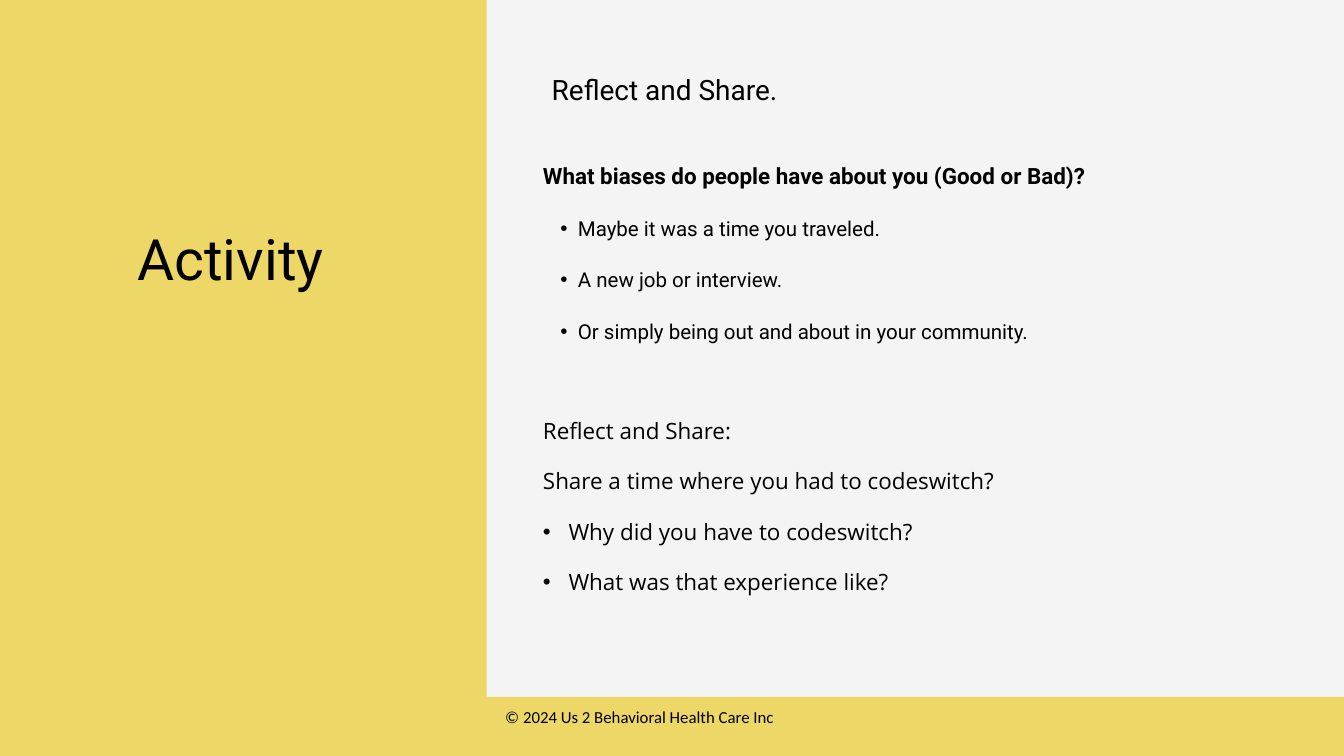
from lxml import etree
from pptx import Presentation
from pptx.dml.color import RGBColor
from pptx.enum.shapes import MSO_SHAPE
from pptx.enum.text import MSO_ANCHOR, MSO_AUTO_SIZE, PP_ALIGN
from pptx.oxml.ns import qn
from pptx.util import Inches, Pt

YELLOW = RGBColor(0xED, 0xD7, 0x67)
LIGHT_GREY = RGBColor(0xF4, 0xF4, 0xF4)
BLACK = RGBColor(0, 0, 0)

WIDTH, HEIGHT = 20, 11.25
PANEL_LEFT = 7.24
FOOTER_TOP = 10.37
COLUMN_WIDTH = 10.35

# Paragraph styles; spacing in points, indent in inches
TITLE = {"font": "Roboto", "size": 61, "line": 73.2, "align": PP_ALIGN.CENTER}
HEADING = {"font": "Roboto", "size": 30, "line": 42}
QUESTION = {"font": "Roboto", "size": 24, "line": 73.2, "bold": True}
EXAMPLE = {"font": "Roboto", "size": 22, "line": 55, "level": 1, "margin": 0.52, "hang": 0.26}
PROMPT = {"font": "Open Sans", "size": 24, "line": 54}
FIRST_PROMPT = {**PROMPT, "before": 54}
FOLLOW_UP = {**PROMPT, "margin": 0.38, "hang": 0.38}
COPYRIGHT = {"font": "Calibri", "size": 18}

TITLE_TEXT = [("Activity", TITLE)]
HEADING_TEXT = [("Reflect and Share.", HEADING)]
BODY_TEXT = [
    ("What biases do people have about you (Good or Bad)?", QUESTION),
    ("Maybe it was a time you traveled.", EXAMPLE),
    ("A new job or interview.", EXAMPLE),
    ("Or simply being out and about in your community.", EXAMPLE),
    ("Reflect and Share:", FIRST_PROMPT),
    ("Share a time where you had to codeswitch?", PROMPT),
    ("Why did you have to codeswitch?", FOLLOW_UP),
    ("What was that experience like?", FOLLOW_UP),
]
FOOTER_TEXT = [("© 2024 Us 2 Behavioral Health Care Inc", COPYRIGHT)]


def add_block(slide, left, top, width, height, color):
    block = slide.shapes.add_shape(
        MSO_SHAPE.RECTANGLE, *map(Inches, (left, top, width, height)))
    block.shadow.inherit = False
    block.fill.solid()
    block.fill.fore_color.rgb = color
    block.line.fill.background()


def add_bullet(paragraph, margin, hang):
    properties = paragraph._p.get_or_add_pPr()
    properties.set("marL", str(Inches(margin)))
    properties.set("indent", str(-Inches(hang)))
    etree.SubElement(properties, qn("a:buFont"), typeface="Arial")
    etree.SubElement(properties, qn("a:buChar"), char="•")


def write_paragraph(paragraph, text, style):
    paragraph.level = style.get("level", 0)
    paragraph.alignment = style.get("align", PP_ALIGN.LEFT)
    if "line" in style:
        paragraph.line_spacing = Pt(style["line"])
    if "before" in style:
        paragraph.space_before = Pt(style["before"])
    if "hang" in style:
        add_bullet(paragraph, style["margin"], style["hang"])
    run = paragraph.add_run()
    run.text = text
    run.font.name = style["font"]
    run.font.size = Pt(style["size"])
    run.font.bold = style.get("bold", False)
    run.font.color.rgb = BLACK


def fill_text(shape, box, content, insets=(0, 0)):
    """Place the shape and write its paragraphs; insets are horizontal, vertical."""
    for name, value in zip(("left", "top", "width", "height"), box):
        setattr(shape, name, Inches(value))
    frame = shape.text_frame
    horizontal, vertical = map(Inches, insets)
    frame_format = {
        "word_wrap": True,
        "auto_size": MSO_AUTO_SIZE.NONE,
        "vertical_anchor": MSO_ANCHOR.TOP,
        "margin_left": horizontal,
        "margin_right": horizontal,
        "margin_top": vertical,
        "margin_bottom": vertical,
    }
    for name, value in frame_format.items():
        setattr(frame, name, value)
    for index, (text, style) in enumerate(content):
        paragraph = frame.add_paragraph() if index else frame.paragraphs[0]
        write_paragraph(paragraph, text, style)


def add_text(slide, box, content, insets=(0, 0)):
    shape = slide.shapes.add_textbox(0, 0, 0, 0)
    fill_text(shape, box, content, insets)


def main():
    presentation = Presentation()
    presentation.slide_width = Inches(WIDTH)
    presentation.slide_height = Inches(HEIGHT)
    slide = presentation.slides.add_slide(presentation.slide_layouts.get_by_name("Title Only"))
    slide.background.fill.solid()
    slide.background.fill.fore_color.rgb = YELLOW

    fill_text(slide.shapes.title, (0.67, 3.33, 5.52, 1.87), TITLE_TEXT)
    add_block(slide, PANEL_LEFT, 0, WIDTH - PANEL_LEFT, HEIGHT, LIGHT_GREY)
    add_text(slide, (8.21, 1, COLUMN_WIDTH, 1.61), HEADING_TEXT)
    add_text(slide, (8.08, 1.8, COLUMN_WIDTH, 7.79), BODY_TEXT)
    add_block(slide, 0, FOOTER_TOP, WIDTH, HEIGHT - FOOTER_TOP, YELLOW)
    add_text(slide, (7.42, 10.46, 4.75, 0.71), FOOTER_TEXT, insets=(0.1, 0.05))

    presentation.save("out.pptx")


if __name__ == "__main__":
    main()
